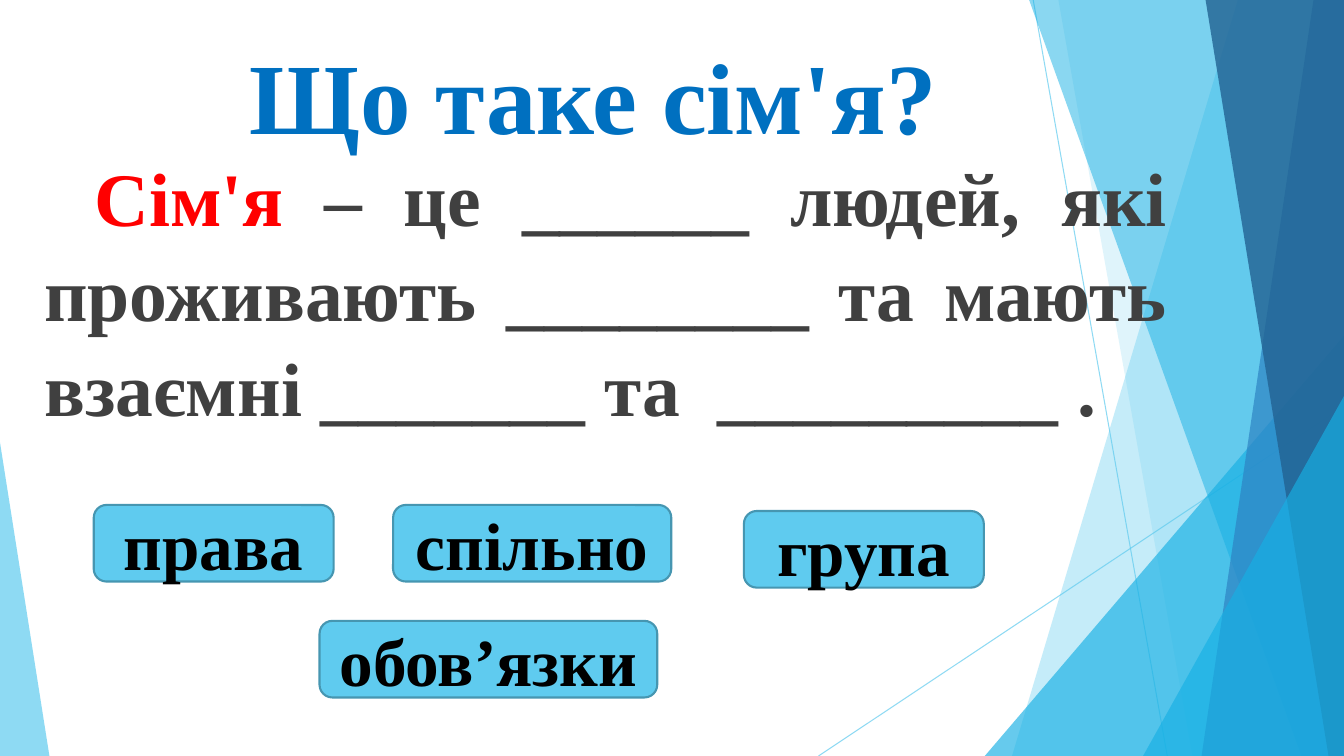
from dataclasses import dataclass

from lxml import etree
from pptx import Presentation
from pptx.dml.color import RGBColor
from pptx.enum.shapes import MSO_CONNECTOR, MSO_SHAPE
from pptx.enum.text import MSO_ANCHOR, MSO_AUTO_SIZE, PP_ALIGN
from pptx.oxml.ns import qn
from pptx.util import Inches, Pt

STRAIGHT = MSO_CONNECTOR.STRAIGHT
TRIANGLE, ROUNDED = MSO_SHAPE.ISOSCELES_TRIANGLE, MSO_SHAPE.ROUNDED_RECTANGLE
TOP, MIDDLE = MSO_ANCHOR.TOP, MSO_ANCHOR.MIDDLE
CENTER, JUSTIFY = PP_ALIGN.CENTER, PP_ALIGN.JUSTIFY
NO_AUTOFIT = MSO_AUTO_SIZE.NONE
CELL = Inches(0.1)
COLUMNS, ROWS = 133.33, 75


@dataclass(frozen=True)
class Theme:
    """Colours, font and type sizes of the slide."""
    font: str = "Times New Roman"
    sky: str = "5FCBEF"
    azure: str = "17B0E4"
    blue: str = "2E83C3"
    navy: str = "226292"
    border: str = "4696B1"
    title: str = "0070C0"
    title_outline: str = "002060"
    body: str = "404040"
    term: str = "FF0000"
    word: str = "000000"
    title_size: int = 72
    body_size: int = 54
    word_size: int = 48


THEME = Theme()


def grid(*cells):
    """Turn grid cells into slide lengths."""
    return [round(cell * CELL) for cell in cells]


def color(code):
    """Return the colour for a hexadecimal code."""
    return RGBColor.from_string(code)


def set_alpha(fill_owner, percent):
    """Make the solid colour inside an element translucent."""
    tone = next(fill_owner.iter(qn("a:srgbClr")))
    etree.SubElement(tone, qn("a:alpha")).set("val", str(percent * 1000))


def style_facet(facet, tone, alpha):
    """Give a background facet its translucent fill."""
    facet.shadow.inherit = False
    facet.fill.solid()
    facet.fill.fore_color.rgb = color(tone)
    facet.line.fill.background()
    set_alpha(facet._element.spPr, alpha)


def add_ray(page, start, end):
    """Draw a thin translucent background line."""
    ray = page.shapes.add_connector(STRAIGHT, *grid(*start, *end))
    ray.line.color.rgb = color(THEME.sky)
    ray.line.width = Pt(0.75)
    properties = ray._element.spPr
    set_alpha(properties, 70)
    etree.SubElement(properties, qn("a:effectLst"))


def add_band(page, top_left, bottom_left, tone, alpha):
    """Draw a full-height band from a slanted edge to the right side."""
    start, *corners = [grid(*point) for point in (
        (top_left, 0), (COLUMNS, 0), (COLUMNS, ROWS), (bottom_left, ROWS))]
    builder = page.shapes.build_freeform(*start, scale=1.0)
    builder.add_line_segments(corners, close=True)
    style_facet(builder.convert_to_shape(), tone, alpha)


def add_corner(page, left, top, width, apex, tone, alpha):
    """Draw a right-angled triangle standing on the bottom edge."""
    corner = page.shapes.add_shape(
        TRIANGLE, *grid(left, top, width, ROWS - top))
    corner.adjustments[0] = apex
    style_facet(corner, tone, alpha)


def add_background(page):
    """Draw the faceted background from back to front."""
    add_ray(page, (102.5, 0), (115.8, ROWS))
    add_ray(page, (COLUMNS, 40.3), (81.2, ROWS))
    add_band(page, 122.8, 100.4, THEME.sky, 36)
    add_band(page, 105, 118.3, THEME.sky, 20)
    add_corner(page, 97.7, 33.3, 35.63, 1, THEME.azure, 66)
    add_band(page, 102.1, 129.1, THEME.azure, 50)
    add_band(page, 130.3, 119.2, THEME.blue, 70)
    add_band(page, 119.6, 131.8, THEME.navy, 80)
    add_corner(page, 113.4, 39.3, 19.93, 1, THEME.azure, 66)
    add_corner(page, 0, 43.9, 4.9, 0, THEME.sky, 70)


def style_paragraph(para, size, tone, alignment):
    """Set the alignment and the bold type of a paragraph."""
    para.alignment = alignment
    para.space_before = Pt(0)
    para.font.name = THEME.font
    para.font.size = Pt(size)
    para.font.bold = True
    para.font.color.rgb = color(tone)


def place(page, holder, cells, anchor):
    """Move a placeholder to the front and return its first paragraph."""
    page.shapes._spTree.append(holder._element)
    holder.left, holder.top, holder.width, holder.height = grid(*cells)
    frame = holder.text_frame
    frame.word_wrap = True
    frame.auto_size = NO_AUTOFIT
    frame.vertical_anchor = anchor
    return frame.paragraphs[0]


def add_title(page, text):
    """Fill the title with outlined type."""
    para = place(page, page.shapes.title, (13.1, 2.1, 94, 14.4), MIDDLE)
    span = para.add_run()
    span.text = text
    style_paragraph(para, THEME.title_size, THEME.title, CENTER)
    outline = etree.Element(qn("a:ln"), w=str(Pt(0.75)))
    paint = etree.SubElement(outline, qn("a:solidFill"))
    etree.SubElement(paint, qn("a:srgbClr"), val=THEME.title_outline)
    span._r.get_or_add_rPr().insert(0, outline)


def add_definition(page, term, text):
    """Fill the body with a term and its gapped definition."""
    para = place(page, page.placeholders[1], (3.4, 14, 113.4, 29.6), TOP)
    properties = para._p.get_or_add_pPr()
    properties.set("marL", "0")
    properties.set("indent", "0")
    para.line_spacing = 1.05
    etree.SubElement(properties, qn("a:buNone"))
    tabs = etree.SubElement(properties, qn("a:tabLst"))
    etree.SubElement(tabs, qn("a:tab"), pos=str(Inches(0.5)), algn="l")
    for part in ("\t", term, text):
        span = para.add_run()
        span.text = part
        if part == term:
            span.font.color.rgb = color(THEME.term)
    style_paragraph(para, THEME.body_size, THEME.body, JUSTIFY)


def add_word(page, text, left, top, width):
    """Draw a rounded card with one word to fill in."""
    card = page.shapes.add_shape(ROUNDED, *grid(left, top, width, 7.6))
    card.shadow.inherit = False
    card.fill.solid()
    card.fill.fore_color.rgb = color(THEME.sky)
    card.line.color.rgb = color(THEME.border)
    card.line.width = Pt(1.5)
    card.text_frame.vertical_anchor = MIDDLE
    para = card.text_frame.paragraphs[0]
    para.add_run().text = text
    style_paragraph(para, THEME.word_size, THEME.word, CENTER)


def main():
    """Build the slide and save the deck."""
    deck = Presentation()
    deck.slide_width, deck.slide_height = grid(COLUMNS, ROWS)
    page = deck.slides.add_slide(deck.slide_layouts[1])
    add_background(page)
    add_title(page, "Що таке сім'я? ")
    add_definition(
        page, "Сім'я",
        " – це ______ людей, які проживають ________ "
        "та мають взаємні _______ та  _________ .")
    for word in (("права", 9.3, 50.1, 23.8), ("спільно", 39, 50.1, 27.6),
                 ("група", 73.8, 50.7, 23.8), ("обов’язки", 31.7, 61.6, 33.5)):
        add_word(page, *word)
    deck.save("out.pptx")


if __name__ == "__main__":
    main()
